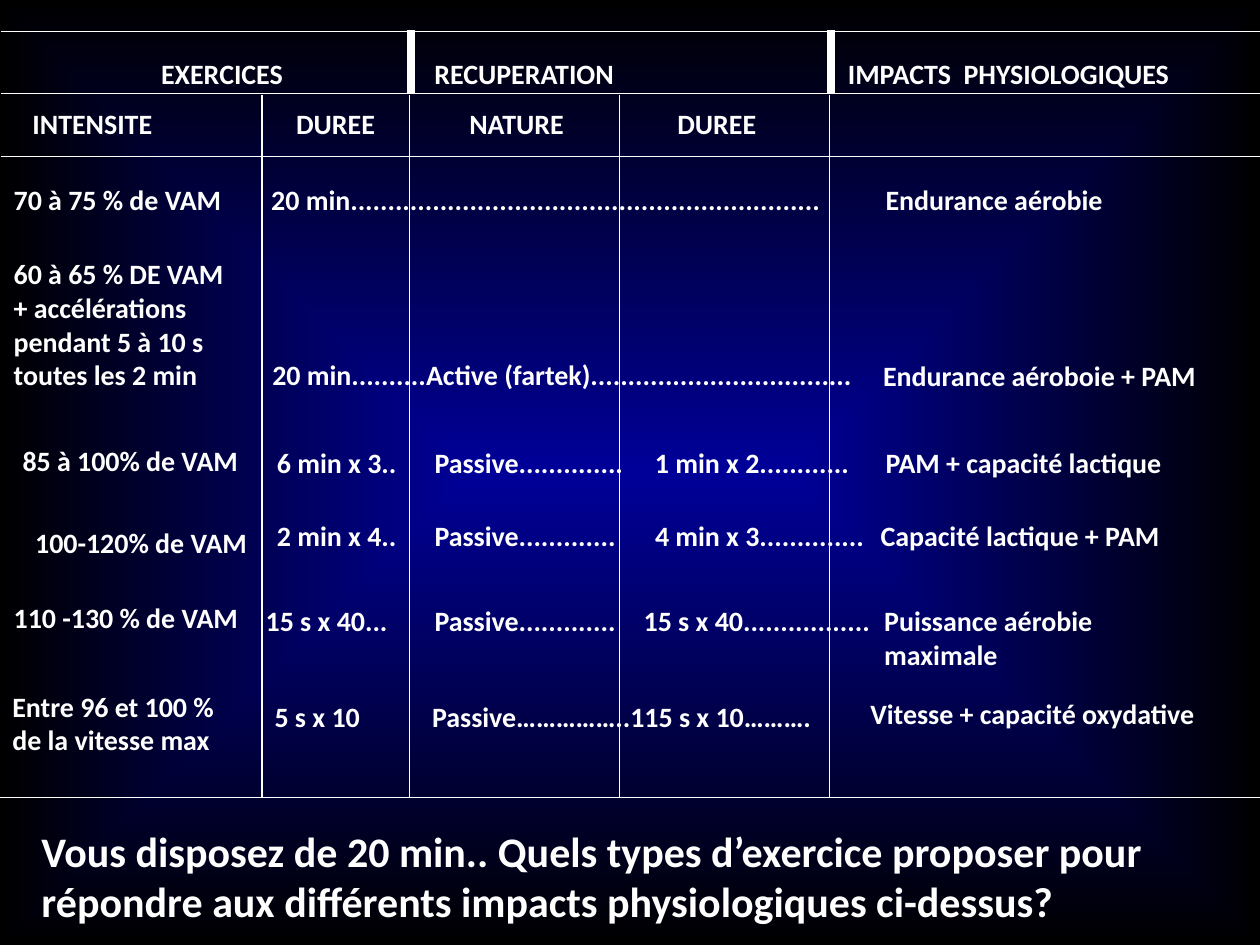
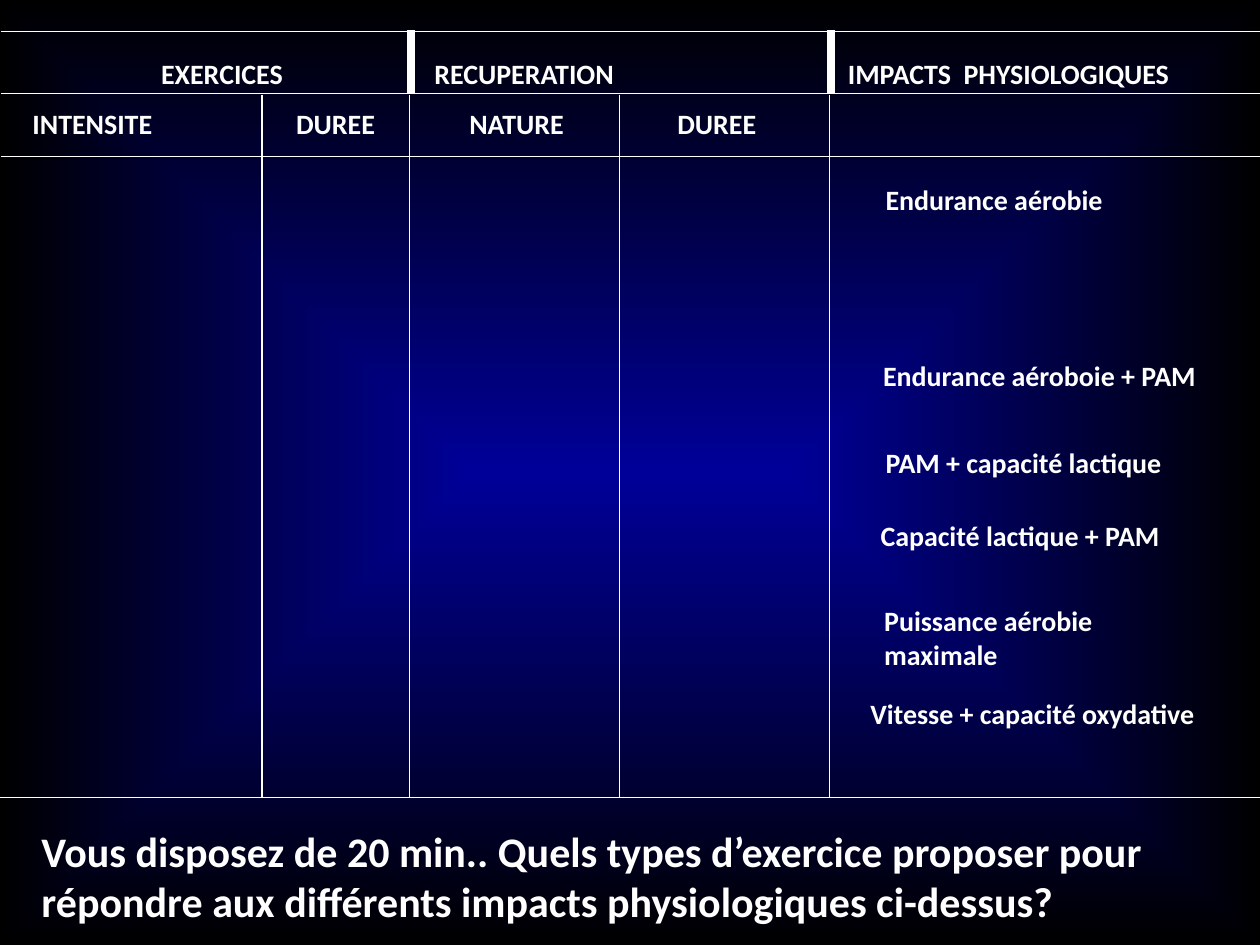
from lxml.etree import SubElement
from pptx import Presentation
from pptx.dml.color import RGBColor
from pptx.enum.shapes import MSO_CONNECTOR
from pptx.enum.text import MSO_AUTO_SIZE
from pptx.oxml.ns import qn
from pptx.util import Pt

COLORS = {"ink": "FFFFFF", "glow": "000099", "edge": "000000"}
FONT = "Calibri"
INSET = 7.2
LINE_HEIGHT = 1.22
LEFT, RIGHT = 0.7, 720.7
HEADER_TOP, HEADER_SPLIT, HEADER_BOTTOM, TABLE_BOTTOM = 18, 53.5, 89.3, 455.8
QUESTION = ("Vous disposez de 20 min.. Quels types d’exercice proposer pour "
            "répondre aux différents impacts physiologiques ci-dessus?")

HEADINGS = [
    (85, 28.8, 85, "EXERCICES"),
    (241.2, 28.8, 118.1, "RECUPERATION"),
    (477.4, 28.8, 200.9, "IMPACTS  PHYSIOLOGIQUES"),
]
IMPACTS = [
    (499, 100.8, 140.4, "Endurance aérobie"),
    (497.5, 201.6, 195.8, "Endurance aéroboie + PAM"),
    (499, 251.3, 174.2, "PAM + capacité lactique"),
    (496.1, 293, 176.4, "Capacité lactique + PAM"),
    (498.2, 341.3, 138.2, "Puissance aérobie\nmaximale"),
    (490.3, 394.6, 202.3, "Vitesse + capacité oxydative"),
]
INTENSITIES = [
    (5.8, 249.8, 139.7, "85 à 100% de VAM"),
    (13, 296.6, 137.5, "100-120% de VAM"),
    (0.7, 339.8, 154.8, "110 -130 % de VAM"),
    (0, 390.2, 134.6, "Entre 96 et 100 %\nde la vitesse max"),
]
DURATIONS = [
    (151.2, 251.3, 83.5, "6 min x 3.."),
    (151.2, 293, 83.5, "2 min x 4.."),
    (144.7, 341.3, 85, "15 s x 40..."),
    (149.8, 396, 64.1, "5 s x 10"),
]
RECOVERIES = [
    (241.2, 251.3, 123.1, "Passive" + "." * 14),
    (367.2, 251.3, 126.7, "1 min x 2" + "." * 12),
    (241.2, 293, 118.8, "Passive" + "." * 13),
    (367.2, 293, 135.4, "4 min x 3" + "." * 14),
    (241.2, 341.3, 118.8, "Passive" + "." * 13),
    (360.7, 341.3, 145.4, "15 s x 40" + "." * 17),
    (239.8, 396, 234, "Passive……………..115 s x 10………."),
]


def rgb(name):
    return RGBColor.from_string(COLORS[name])


def add_tab_stops(p, stops):
    tabs = SubElement(p._p.get_or_add_pPr(), qn("a:tabLst"))
    for stop in stops:
        SubElement(tabs, qn("a:tab"), pos=str(Pt(stop)), algn="l")


def add_text(s, left, top, width, text, size=16, lines=None, wrap=False, tabs=()):
    paragraphs = text.split("\n")
    height = 2 * 3.6 + LINE_HEIGHT * size * (lines or len(paragraphs))
    sp = s.shapes.add_textbox(Pt(left), Pt(top), Pt(width), Pt(height))
    tf = sp.text_frame
    tf.word_wrap = wrap
    tf.auto_size = MSO_AUTO_SIZE.SHAPE_TO_FIT_TEXT
    for i, content in enumerate(paragraphs):
        p = tf.paragraphs[0] if i == 0 else tf.add_paragraph()
        if tabs:
            add_tab_stops(p, [x - left - INSET for x in tabs])
        r = p.add_run()
        r.text = content
        r.font.name = FONT
        r.font.size = Pt(size)
        r.font.bold = True
        r.font.color.rgb = rgb("ink")


def add_texts(s, items):
    for left, top, width, text in items:
        add_text(s, left, top, width, text)


def add_line(s, x1, y1, x2, y2, weight=0.75):
    line = s.shapes.add_connector(MSO_CONNECTOR.STRAIGHT, Pt(x1), Pt(y1), Pt(x2), Pt(y2))
    line.line.color.rgb = rgb("ink")
    line.line.width = Pt(weight)
    SubElement(line._element.spPr, qn("a:effectLst"))


def set_background(s):
    fill = s.background.fill
    fill.gradient()
    for stop, name, position in zip(fill.gradient_stops, ("glow", "edge"), (0, 1)):
        stop.color.rgb = rgb(name)
        stop.position = position
    grad = s._element.find(".//" + qn("a:gradFill"))
    grad.remove(grad.find(qn("a:lin")))
    shade = SubElement(grad, qn("a:path"), path="shape")
    SubElement(shade, qn("a:fillToRect"), dict.fromkeys("ltrb", "50000"))


def add_grid(s):
    for y in (HEADER_TOP, HEADER_SPLIT, HEADER_BOTTOM):
        add_line(s, LEFT, y, RIGHT, y)
    add_line(s, 0, TABLE_BOTTOM, 720, TABLE_BOTTOM)
    for x in (149.8, 234, 354, 474):
        add_line(s, x, 54, x, TABLE_BOTTOM)
    for x in (234.9, 475):
        add_line(s, x, 17.3, x, HEADER_SPLIT, weight=4.5)


def add_worksheet(prs):
    s = prs.slides.add_slide(prs.slide_layouts[6])
    set_background(s)
    add_grid(s)
    add_texts(s, HEADINGS)
    add_text(s, 11.5, 57.6, 434.2, "INTENSITE\tDUREE\tNATURE\tDUREE",
             wrap=True, tabs=(169.4, 268.3, 387.2))
    add_texts(s, IMPACTS)
    add_text(s, 16.6, 468, 703.4, QUESTION, size=24, lines=2, wrap=True)
    return s


def add_answers(s):
    add_text(s, LEFT, 100.8, 480, "70 à 75 % de VAM\t20 min" + "." * 63,
             wrap=True, tabs=(155.1,))
    add_text(s, LEFT, 143.3, 502,
             "60 à 65 % DE VAM\n+ accélérations\npendant 5 à 10 s\ntoutes les 2 min\t20 min"
             + "." * 10 + "Active (fartek)" + "." * 35,
             wrap=True, tabs=(155.7,))
    for column in (INTENSITIES, DURATIONS, RECOVERIES):
        add_texts(s, column)


def main():
    prs = Presentation()
    prs.slide_width, prs.slide_height = Pt(720), Pt(540)
    add_answers(add_worksheet(prs))
    add_worksheet(prs)
    prs.save("out.pptx")


if __name__ == "__main__":
    main()
